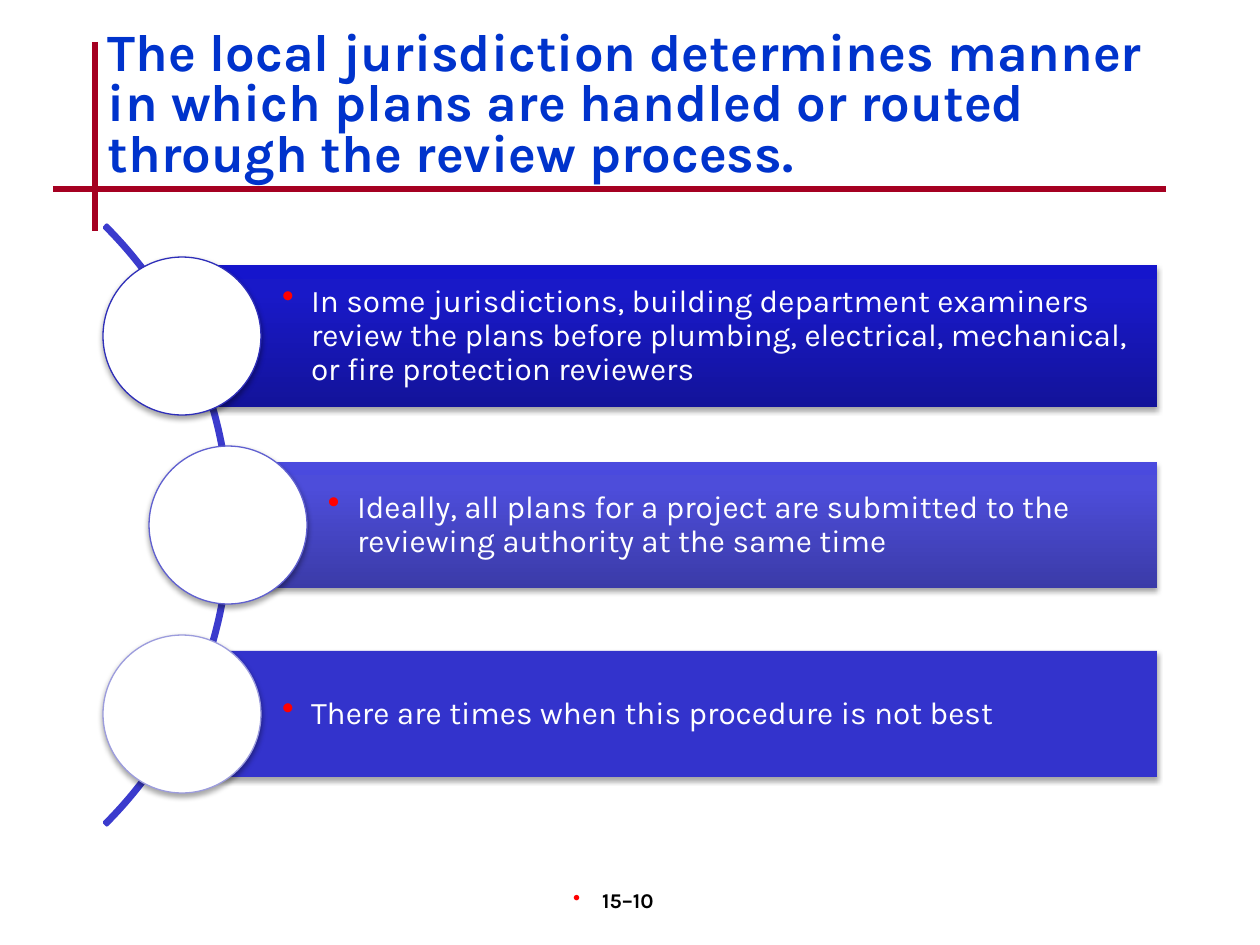
import copy
import pptx
import pptx.util
import pptx.dml.color
import pptx.enum.shapes
import pptx.enum.text
import pptx.oxml

RGB = pptx.dml.color.RGBColor
RED = RGB(0xA5, 0x00, 0x21)
BLUE = RGB(0x00, 0x33, 0xCC)
ARC = RGB(0x3B, 0x3B, 0xCD)
WHITE = RGB(0xFF, 0xFF, 0xFF)
BLACK = RGB(0x00, 0x00, 0x00)
DEEP = [RGB(0x13, 0x13, 0x9A), RGB(0x19, 0x19, 0xC8), RGB(0x15, 0x15, 0xCC)]
MID = [RGB(0x3B, 0x3B, 0xA8), RGB(0x4D, 0x4D, 0xDA), RGB(0x4A, 0x4A, 0xDE)]
FLAT = [RGB(0x33, 0x33, 0xCC)]
RINGS = [RGB(0x2E, 0x2E, 0xB9), RGB(0x60, 0x60, 0xD0), RGB(0x9C, 0x9C, 0xDD)]

SCALE = 914400 / 126  # EMU in one px
NS = 'xmlns:a="http://schemas.openxmlformats.org/drawingml/2006/main"'
KIND = pptx.enum.shapes.MSO_SHAPE
ALIGN = pptx.enum.text.PP_ALIGN
ANCHOR = pptx.enum.text.MSO_ANCHOR
Pt = pptx.util.Pt


def px(*nums):
    return [round(n * SCALE) for n in nums]


def write(shape, text, size, color, bold, pads, look, para, bullet=None):
    frame = shape.text_frame
    frame.text = text
    sides = ["margin_left", "margin_top", "margin_right", "margin_bottom"]
    for key, val in [*zip(sides, px(*pads)), *look.items()]:
        setattr(frame, key, val)
    line = frame.paragraphs[0]
    for key, val in para.items():
        setattr(line, key, val)
    if bullet:
        props = line._p.get_or_add_pPr()
        hang = px(29)[0]
        props.set("marL", str(hang))
        props.set("indent", str(-hang))
        for part in (
            f'<a:buClr {NS}><a:srgbClr val="FF0000"/></a:buClr>',
            f'<a:buSzPct {NS} val="{bullet}000"/>',
            f'<a:buChar {NS} char="•"/>',
        ):
            props.append(pptx.oxml.parse_xml(part))
    font = line.runs[0].font
    for key, val in {"name": "Karla", "size": Pt(size), "bold": bold}.items():
        setattr(font, key, val)
    font.color.rgb = color


deck = pptx.Presentation()
deck.slide_width, deck.slide_height = px(1260, 945)
slide = deck.slides.add_slide(deck.slide_layouts[5])
shapes = slide.shapes

# Crossed red rules
for ends in [(95, 42, 95, 231), (53, 189, 1166, 189)]:
    rule = shapes.add_connector(pptx.enum.shapes.MSO_CONNECTOR.STRAIGHT, *px(*ends))
    rule.line.color.rgb = RED
    rule.line.width = Pt(3)
    rule._element.spPr.append(pptx.oxml.parse_xml(f"<a:effectLst {NS}/>"))

# Page number
page = shapes.add_textbox(*px(494, 882, 262, 63))
write(page, "15–10", 12, BLACK, True, (0, 6, 23, 6),
      {"word_wrap": True}, {"alignment": ALIGN.CENTER}, 100)

# Title
title = shapes.title
title.left, title.top, title.width, title.height = px(95, 25, 1071, 126)
write(title, "The local jurisdiction determines manner in which plans are "
      "handled or routed through the review process.", 30, BLUE, True, (13, 6, 13, 6),
      {"word_wrap": True, "vertical_anchor": ANCHOR.TOP,
       "auto_size": pptx.enum.text.MSO_AUTO_SIZE.NONE},
      {"alignment": ALIGN.LEFT, "line_spacing": 0.8})

# Arc behind the circles
arc = shapes.add_shape(KIND.BLOCK_ARC, *px(-617, 101, 848, 848))
for i, val in enumerate([189, 27, 0.004]):
    arc.adjustments[i] = val
arc.shadow.inherit = False
arc.fill.background()
arc.line.color.rgb = ARC
arc.line.width = Pt(2)

# Bars with their circles
rows = [
    (182, 142, DEEP, "In some jurisdictions, building department examiners review the "
     "plans before plumbing, electrical, mechanical, or fire protection reviewers"),
    (228, 126, MID, "Ideally, all plans for a project are submitted to the reviewing "
     "authority at the same time"),
    (182, 126, FLAT, "There are times when this procedure is not best"),
]
RIGHT, FIRST, STEP, DISC = 1157, 336, 189, 158
for i, (left, high, tones, text) in enumerate(rows):
    mid = FIRST + i * STEP
    bar = shapes.add_shape(KIND.RECTANGLE, *px(left, mid - high / 2, RIGHT - left, high))
    bar.line.fill.background()
    if len(tones) == 1:
        bar.fill.solid()
        bar.fill.fore_color.rgb = tones[0]
    else:
        bar.fill.gradient()
        bar.fill.gradient_angle = 90
        stops = bar._element.xpath(".//a:gsLst")[0]
        stops.append(copy.deepcopy(stops[-1]))
        for stop, tone, spot in zip(bar.fill.gradient_stops, tones, [0, 0.8, 1]):
            stop.color.rgb = tone
            stop.position = spot
    write(bar, text, 18, WHITE, False, (100, 6, 6, 6),
          {"word_wrap": True, "vertical_anchor": ANCHOR.MIDDLE},
          {"alignment": ALIGN.LEFT, "line_spacing": 0.9}, 110)

    disc = shapes.add_shape(KIND.OVAL, *px(left - DISC / 2, mid - DISC / 2, DISC, DISC))
    disc.fill.solid()
    disc.fill.fore_color.rgb = WHITE
    disc.line.color.rgb = RINGS[i]
    disc.line.width = Pt(0.75)

    for item in (bar, disc):
        item.shadow.inherit = False
        item._element.xpath("./p:spPr/a:effectLst")[0].append(pptx.oxml.parse_xml(
            f'<a:outerShdw {NS} blurRad="40000" dist="23000" dir="5400000" '
            'rotWithShape="0"><a:srgbClr val="000000"><a:alpha val="35000"/>'
            "</a:srgbClr></a:outerShdw>"))

deck.save("out.pptx")
